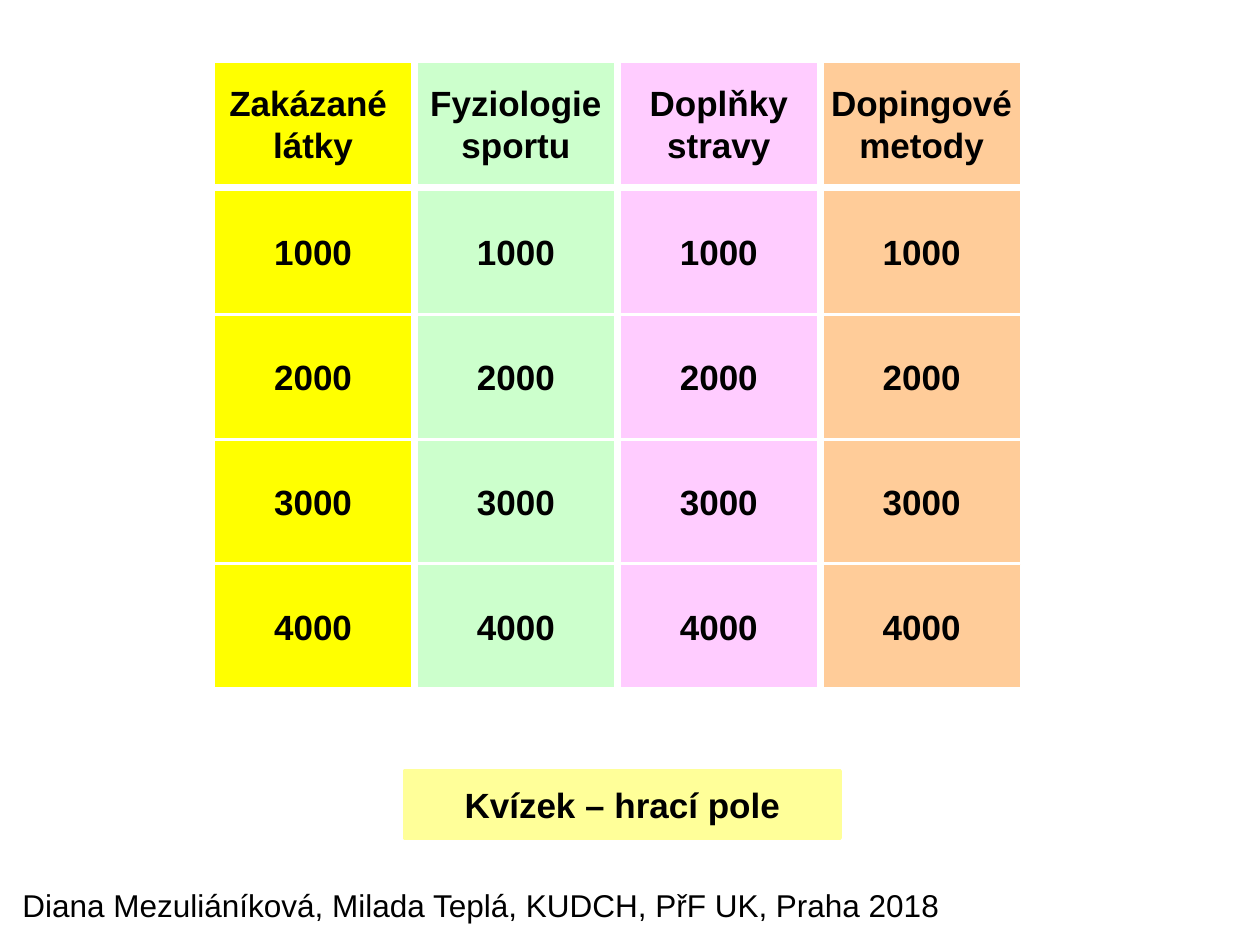
"""Build the game board slide of a quiz about doping in sport."""
import pptx
import pptx.dml.color
import pptx.enum.shapes
import pptx.enum.text
import pptx.util

Inches = pptx.util.Inches
Pt = pptx.util.Pt
RGBColor = pptx.dml.color.RGBColor

BLACK = RGBColor(0x00, 0x00, 0x00)
WHITE = RGBColor(0xFF, 0xFF, 0xFF)
YELLOW = RGBColor(0xFF, 0xFF, 0x00)
GREEN = RGBColor(0xCC, 0xFF, 0xCC)
PINK = RGBColor(0xFF, 0xCC, 0xFF)
ORANGE = RGBColor(0xFF, 0xCC, 0x99)
CREAM = RGBColor(0xFF, 0xFF, 0x99)

TOPICS = [
    ("Zakázané \nlátky", YELLOW),
    ("Fyziologie\nsportu", GREEN),
    ("Doplňky\nstravy", PINK),
    ("Dopingové\nmetody", ORANGE),
]
POINTS = ["1000", "2000", "3000", "4000"]
BOARD_LEFT, COLUMN_STEP = 1.7, 1.61
HEADER_TOP, POINTS_TOP, ROW_STEP = 0.49, 1.51, 0.99
BUTTON_WIDTH, BUTTON_HEIGHT = 1.57, 0.98


def write_text(frame, text, size, bold, alignment):
    """Fill a text frame with one paragraph per line."""
    frame.word_wrap = False
    frame.text = text
    for para in frame.paragraphs:
        para.alignment = alignment
        para.font.name = "Arial"
        para.font.size = Pt(size)
        para.font.bold = bold
        para.font.color.rgb = BLACK


def add_button(page, text, left, top, width, height, fill, line, line_width):
    """Add a flat action button with bold centred text."""
    button = page.shapes.add_shape(
        pptx.enum.shapes.MSO_SHAPE.ACTION_BUTTON_CUSTOM,
        Inches(left), Inches(top), Inches(width), Inches(height))
    button.shadow.inherit = False
    button.fill.solid()
    button.fill.fore_color.rgb = fill
    button.line.color.rgb = line
    button.line.width = Pt(line_width)
    button.text_frame.vertical_anchor = pptx.enum.text.MSO_ANCHOR.MIDDLE
    write_text(button.text_frame, text, 20, True, pptx.enum.text.PP_ALIGN.CENTER)


def add_board(page):
    """Add a column of buttons for each topic."""
    for column, (topic, color) in enumerate(TOPICS):
        left = BOARD_LEFT + column * COLUMN_STEP
        cells = [(topic, HEADER_TOP)]
        cells += [(points, POINTS_TOP + row * ROW_STEP)
                  for row, points in enumerate(POINTS)]
        for text, top in cells:
            add_button(page, text, left, top, BUTTON_WIDTH, BUTTON_HEIGHT,
                       color, WHITE, 1)


def add_credit(page, text):
    """Add the line of authors at the foot of the page."""
    box = page.shapes.add_textbox(
        Inches(0.08), Inches(6.98), Inches(7.55), Inches(0.4))
    box.text_frame.auto_size = pptx.enum.text.MSO_AUTO_SIZE.SHAPE_TO_FIT_TEXT
    write_text(box.text_frame, text, 18, False, pptx.enum.text.PP_ALIGN.LEFT)


def main():
    """Build and save the deck."""
    deck = pptx.Presentation()
    deck.slide_width, deck.slide_height = Inches(10), Inches(7.5)
    page = deck.slides.add_slide(deck.slide_layouts.get_by_name("Blank"))
    add_board(page)
    add_button(page, "Kvízek – hrací pole", 3.21, 6.12, 3.46, 0.53,
               CREAM, CREAM, 2)
    add_credit(page, "Diana Mezuliáníková, Milada Teplá, KUDCH, PřF UK, Praha 2018")
    deck.save("out.pptx")


if __name__ == "__main__":
    main()
